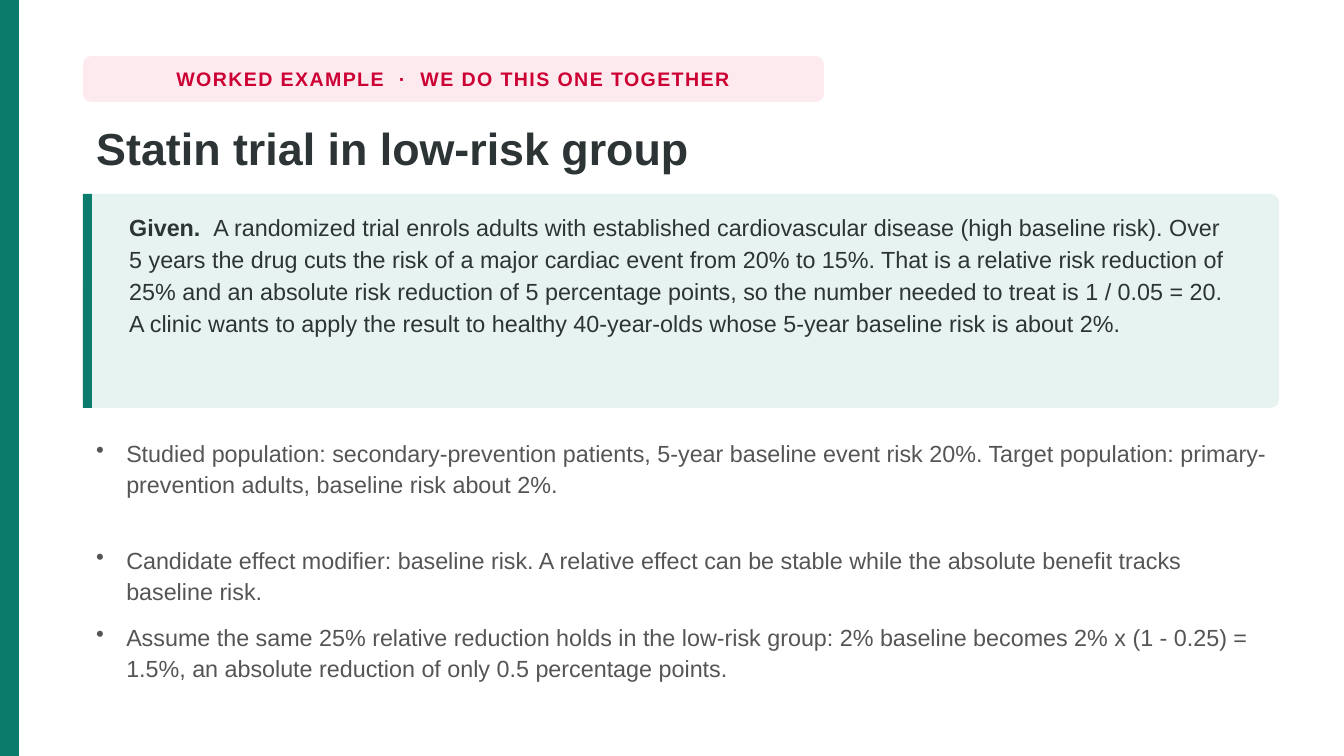
from lxml.etree import SubElement
from pptx import Presentation
from pptx.dml.color import RGBColor
from pptx.enum.shapes import MSO_SHAPE as Shape
from pptx.enum.text import MSO_ANCHOR as Anchor, PP_ALIGN as Align
from pptx.oxml.ns import qn
from pptx.util import Pt

PX = 914400 / 134.4  # EMU per px

GREEN = RGBColor(0x0B, 0x7B, 0x6B)
MINT = RGBColor(0xE6, 0xF3, 0xF0)
PINK = RGBColor(0xFD, 0xEA, 0xEF)
RED = RGBColor(0xCC, 0x00, 0x33)
INK = RGBColor(0x2D, 0x34, 0x36)
GREY = RGBColor(0x55, 0x55, 0x55)

LEFT, WIDTH = 83, 1196
CARD_TOP, CARD_HEIGHT = 194, 214
INDENT = 30

prs = Presentation()
prs.slide_width, prs.slide_height = round(1344 * PX), round(756 * PX)
slide = prs.slides.add_slide(prs.slide_layouts[6])


def add_panel(box, color, rounding=None):
    kind = Shape.RECTANGLE if rounding is None else Shape.ROUNDED_RECTANGLE
    panel = slide.shapes.add_shape(kind, *(round(v * PX) for v in box))
    if rounding is not None:
        panel.adjustments[0] = rounding
    panel.shadow.inherit = False
    panel.fill.solid()
    panel.fill.fore_color.rgb = color
    panel.line.fill.background()
    return panel


def write(frame, texts, size, color, spacing=1.0, bold=None, bullet=False):
    paragraph = frame.paragraphs[0]
    paragraph.line_spacing = spacing
    if bullet:
        props = paragraph._p.get_or_add_pPr()
        props.set("marL", str(round(INDENT * PX)))
        props.set("indent", str(round(-INDENT * PX)))
        SubElement(props, qn("a:buChar"), char="•")
    for text in texts:
        paragraph.add_run().text = text
    font = paragraph.font
    font.name, font.size, font.bold = "Arial", Pt(size), bold
    font.color.rgb = color
    return paragraph


# Edge bar and tag
add_panel((0, 0, 19, 756), GREEN)
tag = add_panel((LEFT, 56, 741, 46), PINK, 0.18).text_frame
tag.word_wrap = False
tag.vertical_anchor = Anchor.MIDDLE
tag_line = write(tag, ["WORKED EXAMPLE  ·  WE DO THIS ONE TOGETHER"], 10.5, RED, bold=True)
tag_line.alignment = Align.CENTER
tag_line.runs[0].font._element.set("spc", "80")

# Card behind the given facts
add_panel((LEFT, CARD_TOP, WIDTH, CARD_HEIGHT), MINT, 0.04)
add_panel((LEFT, CARD_TOP, 9, CARD_HEIGHT), GREEN)

# Title, given facts and bullets
title = ["Statin trial in low-risk group"]
given = [
    "Given.  ",
    "A randomized trial enrols adults with established cardiovascular disease "
    "(high baseline risk). Over 5 years the drug cuts the risk of a major cardiac "
    "event from 20% to 15%. That is a relative risk reduction of 25% and an absolute "
    "risk reduction of 5 percentage points, so the number needed to treat is "
    "1 / 0.05 = 20. A clinic wants to apply the result to healthy 40-year-olds whose "
    "5-year baseline risk is about 2%.",
]
populations = [
    "Studied population: secondary-prevention patients, 5-year baseline event risk "
    "20%. Target population: primary-prevention adults, baseline risk about 2%."
]
modifier = [
    "Candidate effect modifier: baseline risk. A relative effect can be stable while "
    "the absolute benefit tracks baseline risk."
]
assumption = [
    "Assume the same 25% relative reduction holds in the low-risk group: 2% baseline "
    "becomes 2% x (1 - 0.25) = 1.5%, an absolute reduction of only 0.5 percentage points."
]
bullet_style = dict(size=12.5, color=GREY, spacing=1.12, bullet=True)
for box, texts, style in [
    ((LEFT, 113, WIDTH, 75), title, dict(size=24, color=INK, spacing=1.02, bold=True)),
    ((116, 203, 1129, 195), given, dict(size=12.5, color=INK, spacing=1.14)),
    ((LEFT, 429, WIDTH, 95), populations, bullet_style),
    ((LEFT, 536, WIDTH, 66), modifier, bullet_style),
    ((LEFT, 613, WIDTH, 95), assumption, bullet_style),
]:
    frame = slide.shapes.add_textbox(*(round(v * PX) for v in box)).text_frame
    frame.word_wrap = True
    paragraph = write(frame, texts, **style)
    if texts is given:
        paragraph.runs[0].font.bold = True

prs.save("out.pptx")
